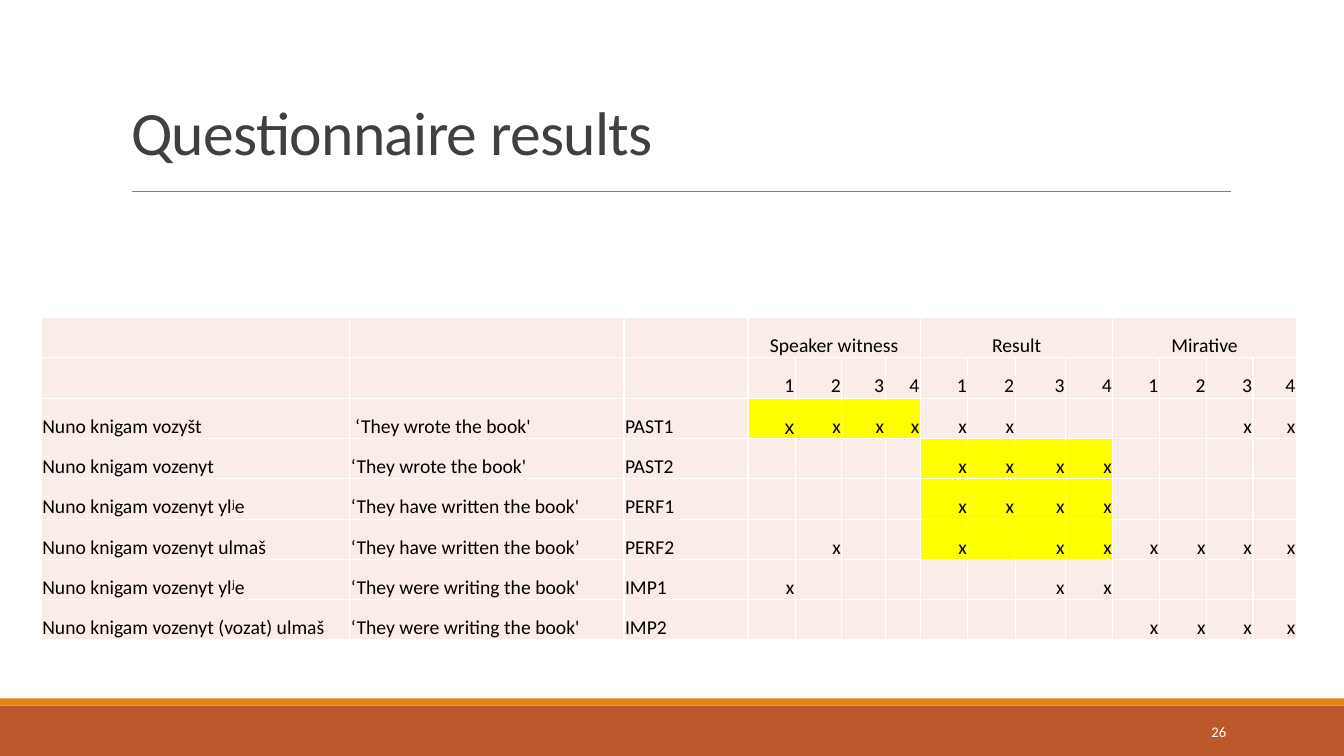
from lxml import etree
from pptx import Presentation
from pptx.dml.color import RGBColor
from pptx.enum.shapes import MSO_CONNECTOR, MSO_SHAPE
from pptx.enum.text import MSO_ANCHOR, MSO_AUTO_SIZE, PP_ALIGN
from pptx.oxml import parse_xml
from pptx.oxml.ns import nsdecls, qn
from pptx.util import Inches, Pt

LEFT, CENTER, RIGHT = PP_ALIGN.LEFT, PP_ALIGN.CENTER, PP_ALIGN.RIGHT
BOTTOM, MIDDLE = MSO_ANCHOR.BOTTOM, MSO_ANCHOR.MIDDLE
NO_FIT = MSO_AUTO_SIZE.NONE
RECT, STRAIGHT = MSO_SHAPE.RECTANGLE, MSO_CONNECTOR.STRAIGHT

WHITE = RGBColor(0xFF, 0xFF, 0xFF)
BLACK = RGBColor(0, 0, 0)
RUST = RGBColor(0xBD, 0x58, 0x2C)
ORANGE = RGBColor(0xE4, 0x83, 0x12)
GRAY = RGBColor(0x80, 0x80, 0x80)
DARK = RGBColor(0x40, 0x40, 0x40)
PINK = RGBColor(0xFA, 0xED, 0xE7)
YELLOW = RGBColor(0xFF, 0xFF, 0x00)

WIDTHS = [3.06, 2.72, 1.23, 0.47, 0.46, 0.43, 0.35, 0.47,
          0.47, 0.5, 0.47, 0.46, 0.47, 0.46, 0.43]
ROW = 0.4
LABELS = 3
GROUPS = ["Speaker witness", "Result", "Mirative"]
SIZE = 4
# Marks: x is an answer, X a highlighted answer, # a highlighted blank.
ANSWERS = [
    ("Nuno knigam vozyšt", " ‘They wrote the book'", "PAST1", "XXXXxx....xx"),
    ("Nuno knigam vozenyt", "‘They wrote the book'", "PAST2", "....XXXX...."),
    ("Nuno knigam vozenyt yl^j^e", "‘They have written the book'", "PERF1",
     "....XXXX...."),
    ("Nuno knigam vozenyt ulmaš", "‘They have written the book’", "PERF2",
     ".x..X#XXxxxx"),
    ("Nuno knigam vozenyt yl^j^e", "‘They were writing the book'", "IMP1",
     "x.....xx...."),
    ("Nuno knigam vozenyt (vozat) ulmaš", "‘They were writing the book'",
     "IMP2", "........xxxx"),
]


def write(frame, text, size=14, color=BLACK, font="Calibri", align=LEFT,
          spacing=None, kern=None):
    para = frame.paragraphs[0]
    para.alignment = align
    if spacing:
        para.line_spacing = spacing
    for i, part in enumerate(text.split("^")):
        run = para.add_run()
        run.text = part
        run.font.size = Pt(size)
        run.font.name = font
        run.font.color.rgb = color
        props = run._r.get_or_add_rPr()
        if i % 2:
            props.set("baseline", "30000")
        if kern:
            props.set("spc", str(kern))


class Board:
    def __init__(self, deck):
        self.slide = deck.slides.add_slide(deck.slide_layouts[5])
        self.shapes = self.slide.shapes

    def band(self, top, height, color):
        bar = self.shapes.add_shape(RECT, 0, Inches(top), Inches(13.33),
                                    Inches(height))
        bar.shadow.inherit = False
        bar.fill.solid()
        bar.fill.fore_color.rgb = color
        bar.line.fill.background()

    def rule(self, left, right, top):
        line = self.shapes.add_connector(STRAIGHT, Inches(left), Inches(top),
                                         Inches(right), Inches(top))
        line.line.color.rgb = GRAY
        line.line.width = Pt(0.5)
        etree.SubElement(line._element.spPr, qn("a:effectLst"))

    def title(self, text):
        head = self.shapes.title
        head.left, head.top = Inches(1.2), Inches(0.31)
        head.width, head.height = Inches(11), Inches(1.41)
        frame = head.text_frame
        frame.auto_size = NO_FIT
        frame.vertical_anchor = BOTTOM
        write(frame, text, size=44, color=DARK, spacing=0.85, kern=-50)

    def number(self, text):
        box = self.shapes.add_textbox(Inches(10.83), Inches(7.06),
                                      Inches(1.43), Inches(0.4))
        frame = box.text_frame
        frame.word_wrap = True
        frame.vertical_anchor = MIDDLE
        write(frame, text, size=10.5, color=WHITE, align=RIGHT)

    def grid(self, left, top, rows):
        table = self.shapes.add_table(
            rows, len(WIDTHS), Inches(left), Inches(top),
            Inches(sum(WIDTHS)), Inches(rows * ROW)).table
        for col, width in zip(table.columns, WIDTHS):
            col.width = Inches(width)
        for row in table.rows:
            row.height = Inches(ROW)
            for cell in row.cells:
                self.cell(cell)
        return table

    def cell(self, cell):
        cell.margin_left = cell.margin_right = cell.margin_top = Inches(0.01)
        cell.margin_bottom = 0
        cell.vertical_anchor = BOTTOM
        props = cell._tc.get_or_add_tcPr()
        for side in "LRTB":
            props.append(parse_xml(
                f'<a:ln{side} {nsdecls("a")} w="12700"><a:solidFill>'
                f'<a:srgbClr val="{WHITE}"/></a:solidFill></a:ln{side}>'))
        self.paint(cell, PINK)

    def paint(self, cell, color):
        cell.fill.solid()
        cell.fill.fore_color.rgb = color

    def results(self):
        table = self.grid(0.41, 3.15, len(ANSWERS) + 2)
        for g, name in enumerate(GROUPS):
            start = LABELS + g * SIZE
            first = table.cell(0, start)
            first.merge(table.cell(0, start + SIZE - 1))
            write(first.text_frame, name, align=CENTER)
            for n in range(SIZE):
                write(table.cell(1, start + n).text_frame, str(n + 1),
                      align=RIGHT)
        for r, (*labels, marks) in enumerate(ANSWERS, 2):
            for c, label in enumerate(labels):
                write(table.cell(r, c).text_frame, label)
            for c, mark in enumerate(marks, LABELS):
                cell = table.cell(r, c)
                if mark in "X#":
                    self.paint(cell, YELLOW)
                if mark in "xX":
                    font = "Arial" if (r, c) == (2, LABELS) else "Calibri"
                    write(cell.text_frame, "x", font=font, align=RIGHT)


def main():
    deck = Presentation()
    deck.slide_width, deck.slide_height = Inches(13.33), Inches(7.5)
    board = Board(deck)
    board.band(7, 0.5, RUST)
    board.band(6.93, 0.07, ORANGE)
    board.rule(1.31, 12.21, 1.9)
    board.title("Questionnaire results")
    board.results()
    board.number("26")
    deck.save("out.pptx")


if __name__ == "__main__":
    main()
